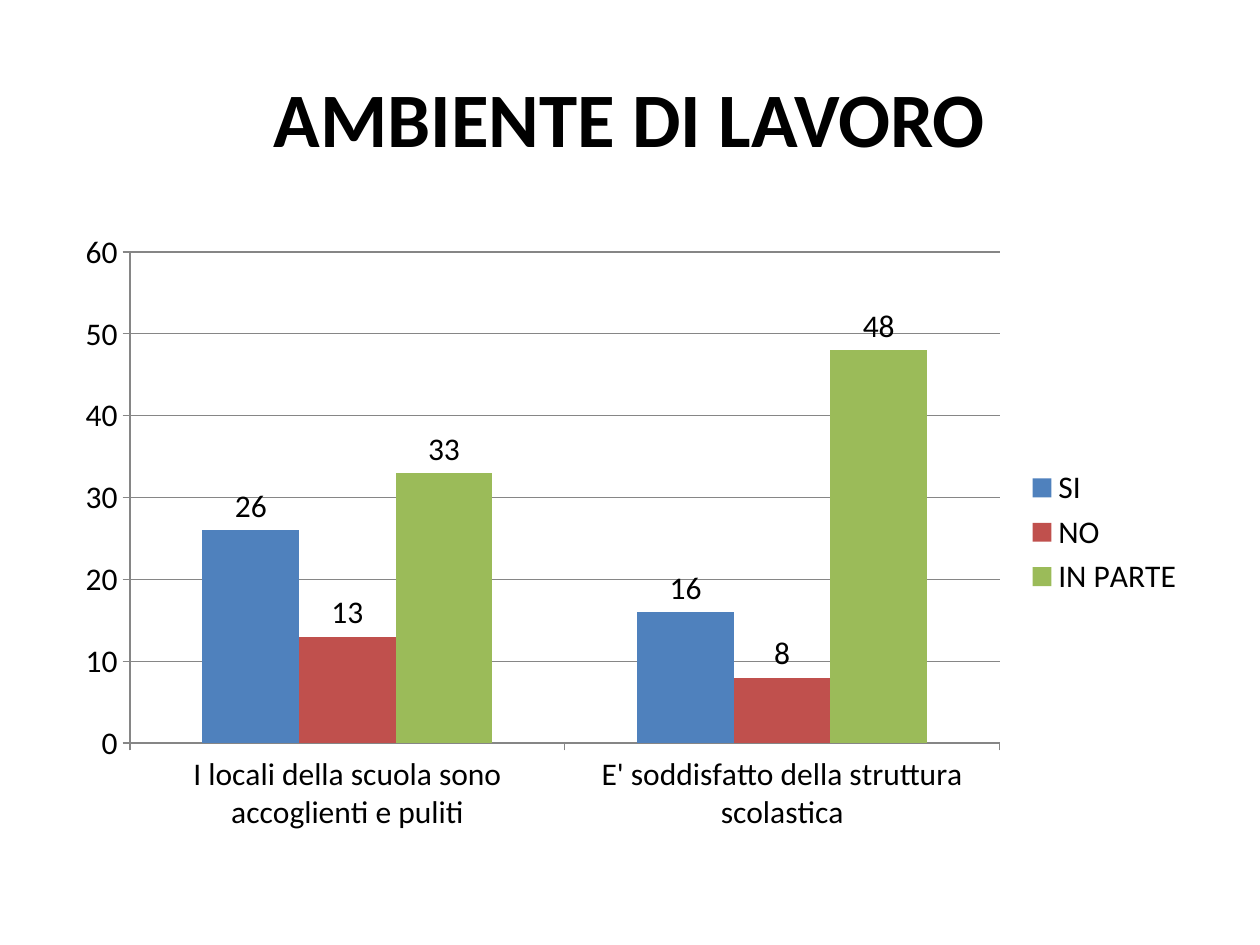
from typing import NamedTuple

import pptx
import pptx.chart.data
import pptx.dml.color
import pptx.enum.chart
import pptx.enum.text
import pptx.util

COLOURS = {
    "text": "000000",
    "line": "868686",
    "blue": "4F81BD",
    "red": "C0504D",
    "green": "9BBB59",
}
FONT = "Calibri"
SLIDE_WIDTH = pptx.util.Inches(10)
SLIDE_HEIGHT = pptx.util.Inches(7.5)


class Area(NamedTuple):
    """A rectangle in shares of the slide's width and height."""

    left: float
    top: float
    width: float
    height: float

    def lengths(self) -> tuple[int, int, int, int]:
        return (
            round(self.left * SLIDE_WIDTH),
            round(self.top * SLIDE_HEIGHT),
            round(self.width * SLIDE_WIDTH),
            round(self.height * SLIDE_HEIGHT),
        )


class Answer(NamedTuple):
    name: str
    counts: tuple[int, ...]
    colour: str


TITLE_AREA = Area(0.05, 0.04, 0.9, 1 / 6)
CHART_AREA = Area(0.05, 7 / 30, 0.9, 0.66)
QUESTIONS = (
    "I locali della scuola sono accoglienti e puliti",
    "E' soddisfatto della struttura scolastica",
)
ANSWERS = (
    Answer("SI", (26, 16), "blue"),
    Answer("NO", (13, 8), "red"),
    Answer("IN PARTE", (33, 48), "green"),
)


def rgb(name: str) -> pptx.dml.color.RGBColor:
    return pptx.dml.color.RGBColor.from_string(COLOURS[name])


def style_font(font, size: float, bold: bool = False) -> None:
    font.name = FONT
    font.size = pptx.util.Pt(size)
    font.bold = bold
    font.color.rgb = rgb("text")


def style_line(line) -> None:
    line.color.rgb = rgb("line")
    line.width = pptx.util.Pt(0.75)


def write_title(slide, text: str) -> None:
    title = slide.shapes.title
    title.left, title.top, title.width, title.height = TITLE_AREA.lengths()
    frame = title.text_frame
    frame.word_wrap = True
    frame.vertical_anchor = pptx.enum.text.MSO_ANCHOR.MIDDLE
    para = frame.paragraphs[0]
    para.alignment = pptx.enum.text.PP_ALIGN.CENTER
    span = para.add_run()
    span.text = text
    style_font(span.font, 44, bold=True)


def draw_answer_chart(slide) -> None:
    data = pptx.chart.data.CategoryChartData()
    data.categories = QUESTIONS
    for answer in ANSWERS:
        data.add_series(answer.name, answer.counts)
    chart = slide.shapes.add_chart(
        pptx.enum.chart.XL_CHART_TYPE.COLUMN_CLUSTERED, *CHART_AREA.lengths(), data
    ).chart
    chart.has_title = False
    style_font(chart.font, 18)

    chart.has_legend = True
    chart.legend.position = pptx.enum.chart.XL_LEGEND_POSITION.RIGHT
    chart.legend.include_in_layout = False

    for axis in (chart.category_axis, chart.value_axis):
        axis.major_tick_mark = pptx.enum.chart.XL_TICK_MARK.OUTSIDE
        axis.minor_tick_mark = pptx.enum.chart.XL_TICK_MARK.NONE
        style_line(axis.format.line)
    chart.value_axis.has_major_gridlines = True
    style_line(chart.value_axis.major_gridlines.format.line)

    plot = chart.plots[0]
    plot.gap_width = 150
    plot.overlap = 0
    plot.vary_by_categories = False
    for series, answer in zip(plot.series, ANSWERS):
        series.invert_if_negative = False
        series.format.fill.solid()
        series.format.fill.fore_color.rgb = rgb(answer.colour)
        labels = series.data_labels
        labels.show_value = True
        labels.position = pptx.enum.chart.XL_LABEL_POSITION.OUTSIDE_END


def main() -> None:
    deck = pptx.Presentation()
    deck.slide_width = SLIDE_WIDTH
    deck.slide_height = SLIDE_HEIGHT
    slide = deck.slides.add_slide(deck.slide_layouts.get_by_name("Title Only"))
    write_title(slide, "AMBIENTE DI LAVORO")
    draw_answer_chart(slide)
    deck.save("out.pptx")


if __name__ == "__main__":
    main()
